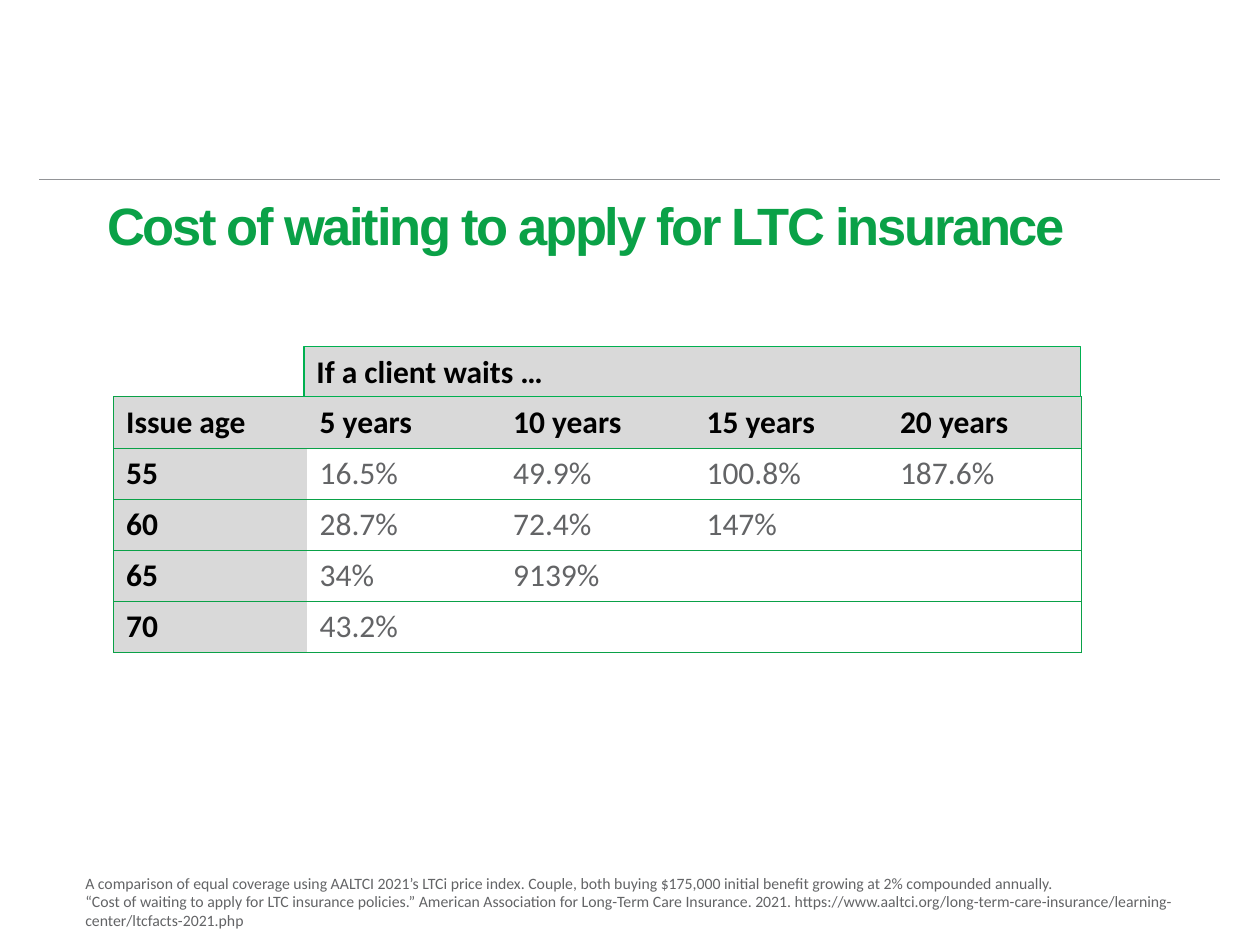
"""Build the slide on the cost of waiting to apply for LTC insurance."""
from dataclasses import dataclass

from lxml.etree import SubElement
from pptx import Presentation
from pptx.dml.color import RGBColor
from pptx.enum.shapes import MSO_CONNECTOR, MSO_SHAPE
from pptx.enum.text import MSO_ANCHOR, PP_ALIGN
from pptx.oxml.ns import qn
from pptx.util import Cm, Pt

TITLE = "Cost of waiting to apply for LTC insurance"
BANNER = "If a client waits …"
ROWS = [
    ("Issue age", "5 years", "10 years", "15 years", "20 years"),
    ("55", "16.5%", "49.9%", "100.8%", "187.6%"),
    ("60", "28.7%", "72.4%", "147%", ""),
    ("65", "34%", "9139%", "", ""),
    ("70", "43.2%", "", "", ""),
]
FOOTNOTES = [
    "A comparison of equal coverage using AALTCI 2021’s LTCi price index. Couple, both buying "
    "$175,000 initial benefit growing at 2% compounded annually.",
    "“Cost of waiting to apply for LTC insurance policies.” American Association for Long-Term "
    "Care Insurance. 2021. https://www.aaltci.org/long-term-care-insurance/learning-center/"
    "ltcfacts-2021.php",
]
TABLE_LEFT, TABLE_TOP, COLUMN_WIDTH, ROW_HEIGHT = 2.29, 8.0, 3.9, 1.03
BANNER_LEFT, BANNER_HEIGHT = 6.13, 1.02


@dataclass(frozen=True)
class Theme:
    title_font: str = "Arial"
    body_font: str = "Calibri"
    green: str = "0AA147"
    banner_line: str = "00B050"
    rule: str = "929497"
    shade: str = "D9D9D9"
    dark: str = "000000"
    grey: str = "636466"
    title_size: float = 30
    table_size: float = 18
    note_size: float = 9
    thin: float = 0.5
    banner_width: float = 0.75


THEME = Theme()


def rgb(color):
    return RGBColor.from_string(color)


def format_runs(paragraph, font, size, color, bold=False):
    for run in paragraph.runs:
        run.font.name = font
        run.font.size = Pt(size)
        run.font.bold = bold
        run.font.color.rgb = rgb(color)


def add_text(slide, left, top, width, height, text):
    frame = slide.shapes.add_textbox(Cm(left), Cm(top), Cm(width), Cm(height)).text_frame
    frame.word_wrap = True
    frame.text = text
    return frame


def add_rule(slide):
    rule = slide.shapes.add_connector(MSO_CONNECTOR.STRAIGHT, Cm(0.79), Cm(3.61), Cm(24.59), Cm(3.61))
    rule.line.color.rgb = rgb(THEME.rule)
    rule.line.width = Pt(THEME.thin)
    SubElement(rule.element.spPr, qn("a:effectLst"))


def add_title(slide):
    paragraph = add_text(slide, 1.91, 3.91, 22.66, 2.67, TITLE).paragraphs[0]
    paragraph.line_spacing = 0.9
    format_runs(paragraph, THEME.title_font, THEME.title_size, THEME.green, True)
    for run in paragraph.runs:
        run.font._element.set("spc", "-130")


def add_footnotes(slide):
    for paragraph in add_text(slide, 1.47, 17.48, 22.43, 1.27, "\n".join(FOOTNOTES)).paragraphs:
        format_runs(paragraph, THEME.body_font, THEME.note_size, THEME.grey)


def set_borders(cell, visible_sides):
    properties = cell._tc.get_or_add_tcPr()
    for side in "LRTB":
        line = SubElement(properties, qn(f"a:ln{side}"), w=str(Pt(THEME.thin)))
        if side in visible_sides:
            fill = SubElement(line, qn("a:solidFill"))
            SubElement(fill, qn("a:srgbClr"), val=THEME.green)
        else:
            SubElement(line, qn("a:noFill"))


def add_cost_table(slide):
    row_count, column_count = len(ROWS), len(ROWS[0])
    table = slide.shapes.add_table(
        row_count, column_count, Cm(TABLE_LEFT), Cm(TABLE_TOP),
        Cm(column_count * COLUMN_WIDTH), Cm(row_count * ROW_HEIGHT),
    ).table
    for column in table.columns:
        column.width = Cm(COLUMN_WIDTH)
    for row_index, values in enumerate(ROWS):
        table.rows[row_index].height = Cm(ROW_HEIGHT)
        for column_index, value in enumerate(values):
            cell = table.cell(row_index, column_index)
            heading = row_index == 0 or column_index == 0
            sides = "TB" + ("L" if column_index == 0 else "")
            sides += "R" if column_index == column_count - 1 else ""
            set_borders(cell, sides)
            if heading:
                cell.fill.solid()
                cell.fill.fore_color.rgb = rgb(THEME.shade)
            else:
                cell.fill.background()
            cell.text_frame.text = value
            color = THEME.dark if heading else THEME.grey
            format_runs(cell.text_frame.paragraphs[0], THEME.body_font, THEME.table_size, color, heading)


def add_banner(slide):
    right = TABLE_LEFT + len(ROWS[0]) * COLUMN_WIDTH
    banner = slide.shapes.add_shape(
        MSO_SHAPE.RECTANGLE, Cm(BANNER_LEFT), Cm(TABLE_TOP - BANNER_HEIGHT),
        Cm(right - BANNER_LEFT), Cm(BANNER_HEIGHT),
    )
    banner.shadow.inherit = False
    banner.fill.solid()
    banner.fill.fore_color.rgb = rgb(THEME.shade)
    banner.line.color.rgb = rgb(THEME.banner_line)
    banner.line.width = Pt(THEME.banner_width)
    frame = banner.text_frame
    frame.word_wrap = True
    frame.vertical_anchor = MSO_ANCHOR.TOP
    frame.text = BANNER
    frame.paragraphs[0].alignment = PP_ALIGN.LEFT
    format_runs(frame.paragraphs[0], THEME.body_font, THEME.table_size, THEME.dark, True)


def main():
    presentation = Presentation()
    presentation.slide_width, presentation.slide_height = Cm(25.4), Cm(19.05)
    slide = presentation.slides.add_slide(presentation.slide_layouts[6])
    for add_part in (add_rule, add_title, add_footnotes, add_cost_table, add_banner):
        add_part(slide)
    presentation.save("out.pptx")


if __name__ == "__main__":
    main()
